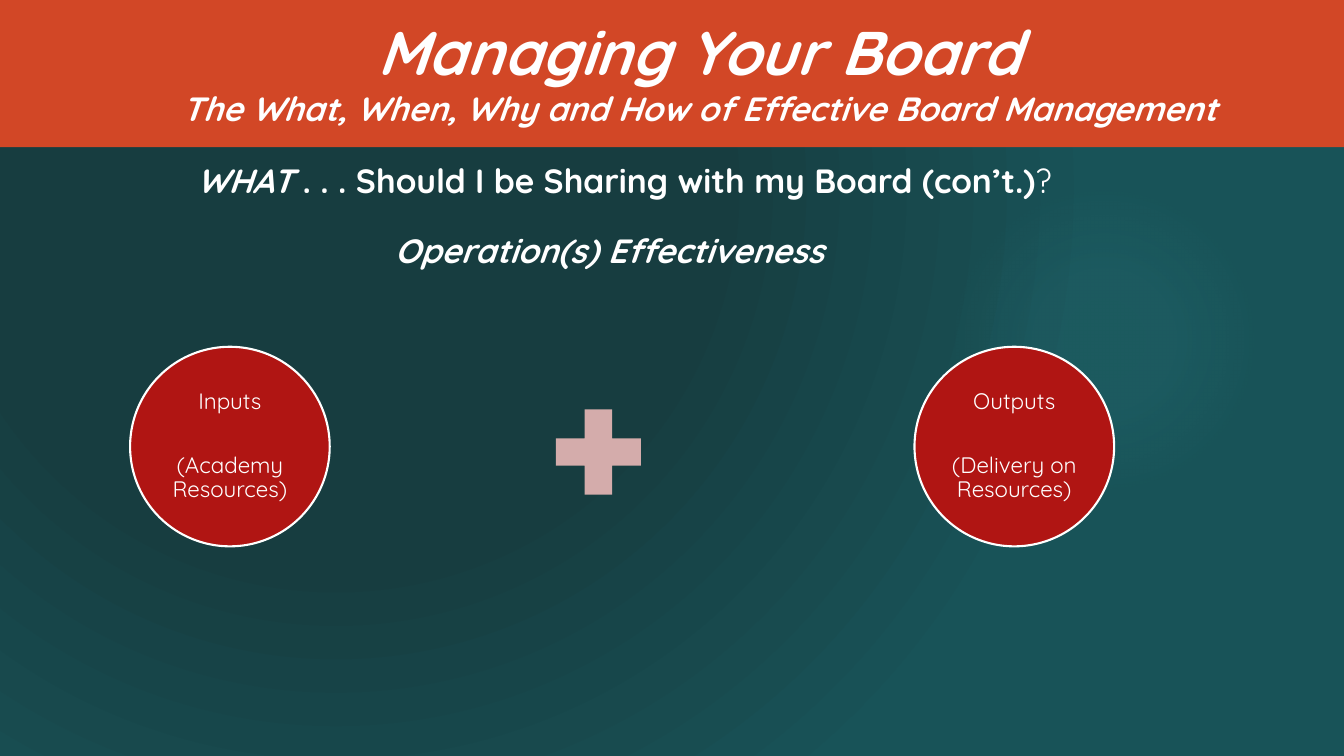
import pptx
import pptx.dml.color
import pptx.enum.shapes
import pptx.enum.text
import pptx.oxml
import pptx.oxml.ns
import pptx.util

Inches = pptx.util.Inches
Pt = pptx.util.Pt
RGB = pptx.dml.color.RGBColor
SHAPE = pptx.enum.shapes.MSO_SHAPE
ANCHOR = pptx.enum.text.MSO_ANCHOR
CENTER = pptx.enum.text.PP_ALIGN.CENTER

WHITE = RGB(0xFF, 0xFF, 0xFF)
ORANGE = RGB(0xD2, 0x47, 0x26)
RED = RGB(0xB0, 0x15, 0x13)
PINK = RGB(0xD4, 0xAC, 0xAB)
DARK = RGB(0x17, 0x3D, 0x40)
TEAL = RGB(0x18, 0x53, 0x58)
AQUA = RGB(0x50, 0xB9, 0xC1)

HEAD = {"size": Pt(24), "bold": True, "italic": True}
TITLE = {**HEAD, "size": Pt(44)}
PLAIN = {"size": Pt(16)}


def fade(fill, owner, stops, rect):
    """Give owner a radial gradient; a stop is (place %, colour, opacity %)."""
    fill.gradient()
    marks = "".join(
        f'<a:gs pos="{at * 1000}"><a:srgbClr val="{color}">'
        f'<a:alpha val="{alpha * 1000}"/></a:srgbClr></a:gs>'
        for at, color, alpha in stops)
    sides = " ".join(f'{side}="{part * 1000}"' for side, part in zip("ltrb", rect))
    old = owner.find(".//" + pptx.oxml.ns.qn("a:gradFill"))
    new = pptx.oxml.parse_xml(
        f'<a:gradFill {pptx.oxml.ns.nsdecls("a")} rotWithShape="1">'
        f'<a:gsLst>{marks}</a:gsLst><a:path path="circle">'
        f'<a:fillToRect {sides}/></a:path></a:gradFill>')
    old.getparent().replace(old, new)


def draw(slide, kind, box, color=None, edge=None):
    shape = slide.shapes.add_shape(kind, *map(Inches, box))
    shape.shadow.inherit = False
    if color is not None:
        shape.fill.solid()
        shape.fill.fore_color.rgb = color
    if edge is None:
        shape.line.fill.background()
    else:
        shape.line.color.rgb = edge
        shape.line.width = Pt(1.5)
    return shape


def write(frame, paras):
    """Fill a frame with centred paragraphs, each a list of (words, format)."""
    for i, runs in enumerate(paras):
        para = frame.add_paragraph() if i else frame.paragraphs[0]
        para.alignment = CENTER
        for words, form in runs:
            run = para.add_run()
            run.text = words
            run.font.name = "Quicksand"
            run.font.color.rgb = WHITE
            for key, value in form.items():
                setattr(run.font, key, value)


def label(slide, box, paras, wrap=True, top=0.05):
    frame = slide.shapes.add_textbox(*map(Inches, box)).text_frame
    frame.word_wrap = wrap
    frame.margin_top = Inches(top)
    write(frame, paras)


def backdrop(slide):
    fade(slide.background.fill, slide.element,
         [(48, DARK, 100), (100, TEAL, 100)], (50, 50, 100, 100))
    glow = draw(slide, SHAPE.OVAL, (9.41, 1.83, 3.08, 3.08))
    fade(glow.fill, glow.element,
         [(0, AQUA, 7), (36, AQUA, 6), (69, AQUA, 0)], (50, 50, 50, 50))


def banner(slide, box):
    left, top, wide, high = box
    draw(slide, SHAPE.RECTANGLE, box, ORANGE)
    label(slide, (left + 1.61, top + 0.09, wide - 2.68, high - 0.21), [
        [("Managing Your Board", TITLE)],
        [("The What, When, Why and How of Effective Board Management", HEAD)]])


def heading(slide, box):
    left, top, wide, high = box
    label(slide, (left, top + 0.39, wide, high - 0.39),
          [[("Operation(s) Effectiveness", HEAD)]], top=0.35)
    upright = {**HEAD, "italic": False}
    label(slide, (left + 1.24, top, 8.8, 0.5), [[
        ("WHAT ", HEAD),
        (". . . Should I be Sharing with my Board (con’t.)", upright),
        ("?", {**upright, "bold": False})]], wrap=False)


def circle(slide, box, name, note):
    shape = draw(slide, SHAPE.OVAL, box, RED, WHITE)
    frame = shape.text_frame
    frame.word_wrap = True
    frame.vertical_anchor = ANCHOR.MIDDLE
    for side in ("left", "top", "right", "bottom"):
        setattr(frame, "margin_" + side, Inches(0.02))
    write(frame, [[(name, PLAIN)], [(note, PLAIN)]])
    for para in frame.paragraphs:
        para.line_spacing = 0.9
    frame.paragraphs[0].space_after = Pt(28.5)


def flow(slide, box):
    """Place a circle at each end of the box and a plus sign between."""
    left, top, wide, size = box
    circle(slide, (left, top, size, size), "Inputs", "(Academy Resources)")
    draw(slide, SHAPE.MATH_PLUS, (left + 4.07, top + 0.47, 1.15, 1.15), PINK)
    circle(slide, (left + wide - size, top, size, size),
           "Outputs", "(Delivery on Resources)")


def main():
    deck = pptx.Presentation()
    deck.slide_width, deck.slide_height = Inches(13.33), Inches(7.5)
    slide = deck.slides.add_slide(deck.slide_layouts[6])
    backdrop(slide)
    banner(slide, (0, 0, 13.33, 1.46))
    heading(slide, (0.55, 1.54, 10.98, 2.11))
    flow(slide, (1.29, 3.44, 9.76, 1.98))
    deck.save("out.pptx")


if __name__ == "__main__":
    main()
